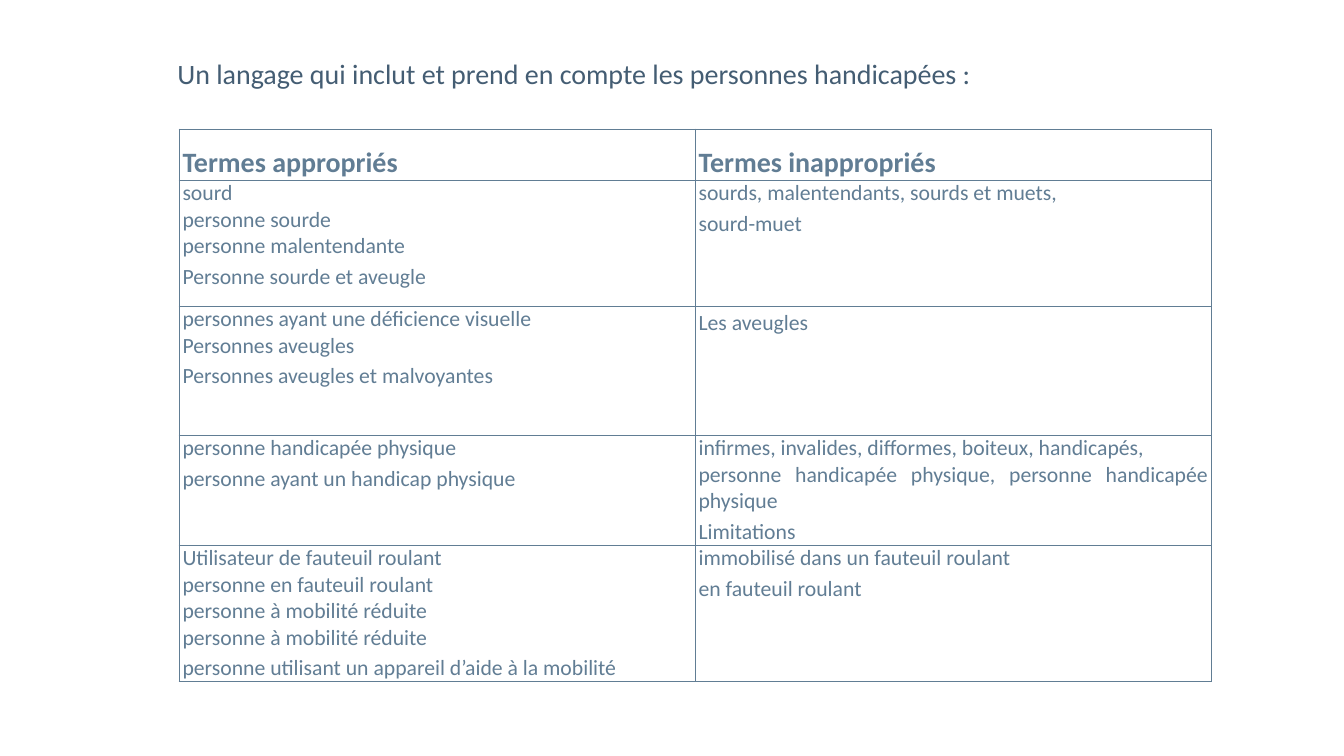
from dataclasses import dataclass

import lxml.etree
import pptx
import pptx.dml.color
import pptx.enum.text
import pptx.oxml.ns
import pptx.util

Cm = pptx.util.Cm
Pt = pptx.util.Pt
qn = pptx.oxml.ns.qn

FONT = "Calibri"
SLATE = "617D94"
NAVY = "445D73"
COLUMN_WIDTH = 26.01


@dataclass
class TermRow:
    height: float
    appropriate: list[str]
    inappropriate: list[str]
    size: float = 31
    last_spacing: float = 1.15
    bold: bool = False


TERM_ROWS = [
    TermRow(2.24, ["Termes appropriés"], ["Termes inappropriés"],
            size=40, last_spacing=1.5, bold=True),
    TermRow(6.35,
            ["sourd", "personne sourde", "personne malentendante",
             "Personne sourde et aveugle"],
            ["sourds, malentendants, sourds et muets,", "sourd-muet"]),
    TermRow(6.5,
            ["personnes ayant une déficience visuelle", "Personnes aveugles",
             "Personnes aveugles et malvoyantes"],
            ["Les aveugles"]),
    TermRow(4.19,
            ["personne handicapée physique",
             "personne ayant un handicap physique"],
            ["infirmes, invalides, difformes, boiteux, handicapés,",
             "personne handicapée physique, personne handicapée physique",
             "Limitations"]),
    TermRow(4.09,
            ["Utilisateur de fauteuil roulant", "personne en fauteuil roulant",
             "personne à mobilité réduite", "personne à mobilité réduite",
             "personne utilisant un appareil d’aide à la mobilité"],
            ["immobilisé dans un fauteuil roulant", "en fauteuil roulant"]),
]


def rgb(value: str) -> pptx.dml.color.RGBColor:
    return pptx.dml.color.RGBColor.from_string(value)


def add_run(paragraph, text: str, size: float, color: str, bold: bool = False) -> None:
    run = paragraph.add_run()
    run.text = text
    run.font.name = FONT
    run.font.size = Pt(size)
    run.font.bold = bold
    run.font.color.rgb = rgb(color)


def set_borders(cell, color: str, width: float) -> None:
    properties = cell._tc.get_or_add_tcPr()
    for position, side in enumerate(("a:lnL", "a:lnR", "a:lnT", "a:lnB")):
        line = lxml.etree.Element(qn(side), w=str(Pt(width)))
        fill = lxml.etree.SubElement(line, qn("a:solidFill"))
        lxml.etree.SubElement(fill, qn("a:srgbClr"), val=color)
        properties.insert(position, line)


def fill_cell(cell, terms: list[str], row: TermRow) -> None:
    """Write one term a paragraph; only the last one has wider line spacing."""
    cell.margin_left = cell.margin_right = Cm(0.18)
    cell.margin_top = cell.margin_bottom = 0
    cell.fill.background()
    set_borders(cell, SLATE, 1)
    frame = cell.text_frame
    for index, term in enumerate(terms):
        paragraph = frame.add_paragraph() if index else frame.paragraphs[0]
        paragraph.alignment = pptx.enum.text.PP_ALIGN.JUSTIFY
        paragraph.line_spacing = row.last_spacing if index == len(terms) - 1 else 1.0
        add_run(paragraph, term, row.size, SLATE, row.bold)


def add_terms_table(slide, rows: list[TermRow]) -> None:
    table = slide.shapes.add_table(
        len(rows), 2, Cm(9.02), Cm(6.5), Cm(2 * COLUMN_WIDTH),
        Cm(sum(row.height for row in rows))).table
    table.first_row = table.horz_banding = False
    for column in table.columns:
        column.width = Cm(COLUMN_WIDTH)
    for index, row in enumerate(rows):
        table.rows[index].height = Cm(row.height)
        fill_cell(table.cell(index, 0), row.appropriate, row)
        fill_cell(table.cell(index, 1), row.inappropriate, row)


def write_introduction(introduction, text: str) -> None:
    introduction.left, introduction.top = Cm(8.79), Cm(2.72)
    introduction.width, introduction.height = Cm(55.25), Cm(2.08)
    frame = introduction.text_frame
    frame.word_wrap = True
    frame.auto_size = pptx.enum.text.MSO_AUTO_SIZE.NONE
    frame.vertical_anchor = pptx.enum.text.MSO_ANCHOR.TOP
    frame.margin_left = frame.margin_right = Cm(0.15)
    frame.margin_top = frame.margin_bottom = Cm(0.15)
    paragraph = frame.paragraphs[0]
    properties = paragraph._p.get_or_add_pPr()
    properties.set("marL", "0")
    properties.set("indent", "0")
    lxml.etree.SubElement(properties, qn("a:buNone"))
    paragraph.space_before = Pt(0)
    add_run(paragraph, text, 40, NAVY)


def main() -> None:
    presentation = pptx.Presentation()
    presentation.slide_width = Cm(67.74)
    presentation.slide_height = Cm(38.1)
    slide = presentation.slides.add_slide(presentation.slide_layouts[1])
    unused_title = slide.shapes.title.element
    unused_title.getparent().remove(unused_title)
    add_terms_table(slide, TERM_ROWS)
    write_introduction(
        slide.placeholders[1],
        "Un langage qui inclut et prend en compte les personnes handicapées :")
    presentation.save("out.pptx")


if __name__ == "__main__":
    main()
